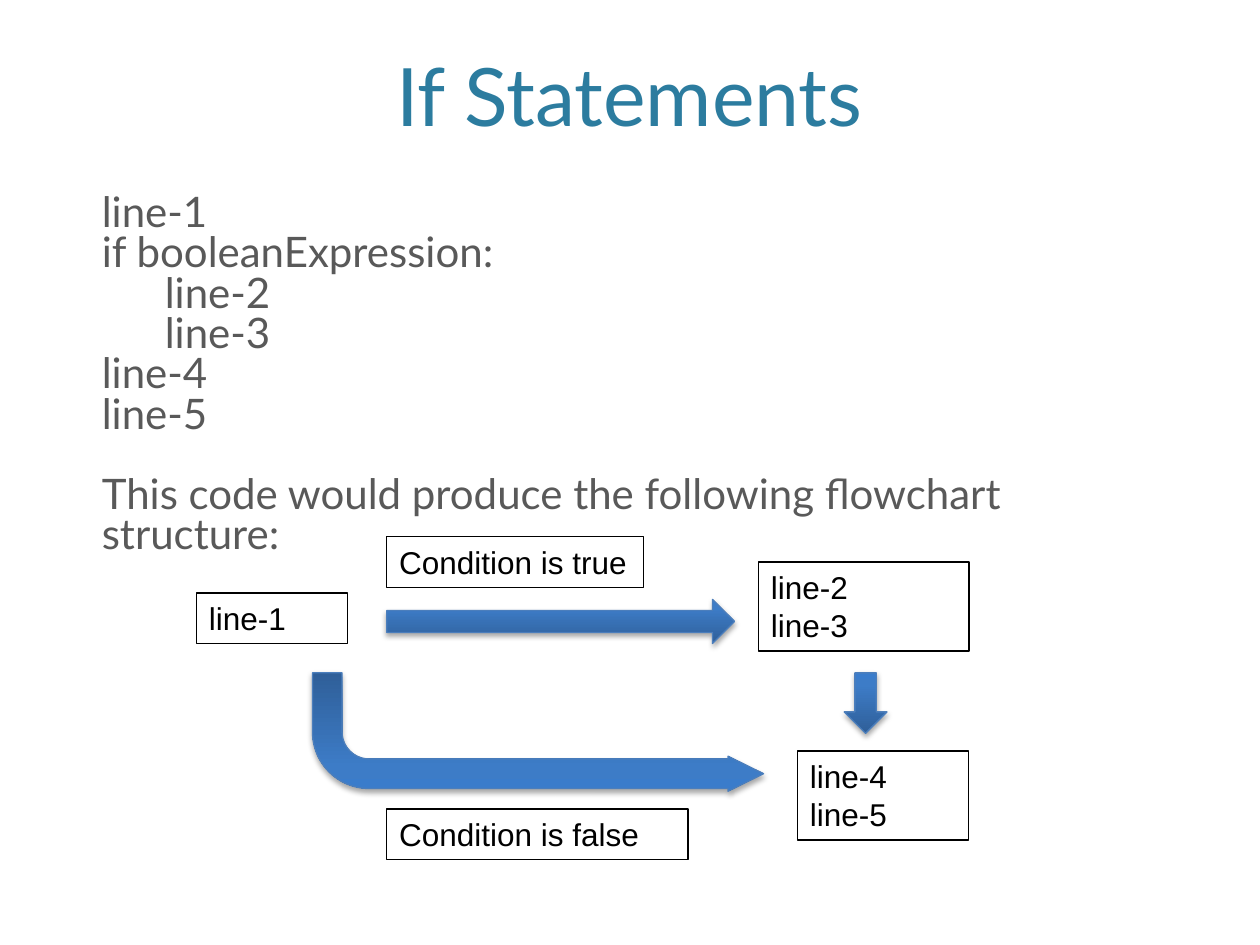
from pptx import Presentation
from pptx.dml.color import RGBColor
from pptx.enum import shapes, text
from pptx.oxml import parse_xml
from pptx.util import Pt

NAMESPACE = 'xmlns:a="http://schemas.openxmlformats.org/drawingml/2006/main"'
COLORS = {
    "title": "2C7C9F",
    "body": "595959",
    "ink": "000000",
    "arrow_line": "4B7EBC",
}
GRADIENT = [(0, "2F5F99"), (80, "3D7CC7"), (100, "3A7CCB")]

TITLE = ("If Statements", (43.2, -20.16, 632.88, 105.12))
BODY_PLACE = (51.12, 108, 632.88, 342)
BODY = [
    ("line-1", 0, 0),
    ("if booleanExpression:", 0, 0),
    ("line-2", 36, 0),
    ("line-3", 36, 0),
    ("line-4", 0, 0),
    ("line-5", 0, 0),
    ("This code would produce the following flowchart structure:", 0, 23),
]
BOXES = [
    (["line-1"], (112.32, 338.8, 86.4)),
    (["Condition is true"], (221.04, 306.72, 146.88)),
    (["line-2", "line-3"], (433.44, 321.12, 120.24)),
    (["Condition is false"], (221.04, 462.24, 172.08)),
    (["line-4", "line-5"], (455.76, 429.12, 97.92)),
]
BOX_HEIGHTS = {1: 29, 2: 51}
ARROWS = [
    ("RIGHT_ARROW", (221.04, 342.5, 198.72, 25.2), [], False),
    ("BENT_ARROW", (178.56, 384.48, 257.76, 67.68), [0.25, 0.148, 0.299, 0.477], True),
    ("DOWN_ARROW", (482.4, 384.48, 24.48, 34.56), [], False),
]

TITLE_FONT = {"name": "Lato", "size": Pt(46), "bold": False}
BODY_FONT = {"name": "Lato", "size": Pt(24)}
BOX_FONT = {"name": "Arial", "size": Pt(18)}


def color(name):
    return RGBColor.from_string(COLORS[name])


def apply(target, values):
    for name, value in values.items():
        setattr(target, name, value)


def format_font(paragraph, values, color_name):
    apply(paragraph.font, values)
    paragraph.font.color.rgb = color(color_name)


def place(shape, position):
    apply(shape, dict(zip(("left", "top", "width", "height"), map(Pt, position))))


def add_shape(slide, kind, position, line_color):
    shape = slide.shapes.add_shape(
        getattr(shapes.MSO_SHAPE, kind), *map(Pt, position))
    shape.shadow.inherit = False
    shape.line.color.rgb = color(line_color)
    shape.line.width = Pt(0.75)
    return shape


def add_title(slide):
    words, position = TITLE
    title = slide.shapes.title
    place(title, position)
    title.text_frame.text = words
    apply(title.text_frame, {"vertical_anchor": text.MSO_ANCHOR.BOTTOM, "word_wrap": True})
    paragraph = title.text_frame.paragraphs[0]
    paragraph.alignment = text.PP_ALIGN.CENTER
    format_font(paragraph, TITLE_FONT, "title")


def add_body(slide):
    frame = slide.shapes.add_textbox(*map(Pt, BODY_PLACE)).text_frame
    frame.word_wrap = True
    frame.text = "\n".join(words for words, _, _ in BODY)
    for paragraph, (_, indent, gap) in zip(frame.paragraphs, BODY):
        paragraph.line_spacing = 0.8
        if indent:
            paragraph._p.get_or_add_pPr().set("marL", str(Pt(indent)))
        if gap:
            paragraph.space_before = Pt(gap)
        format_font(paragraph, BODY_FONT, "body")


def add_box(slide, lines, position):
    box = add_shape(slide, "RECTANGLE", (*position, BOX_HEIGHTS[len(lines)]), "ink")
    box.fill.background()
    frame = box.text_frame
    frame.text = "\n".join(lines)
    apply(frame, {
        "word_wrap": True,
        "vertical_anchor": text.MSO_ANCHOR.TOP,
        "auto_size": text.MSO_AUTO_SIZE.SHAPE_TO_FIT_TEXT,
    })
    for paragraph in frame.paragraphs:
        paragraph.alignment = text.PP_ALIGN.LEFT
        format_font(paragraph, BOX_FONT, "ink")


def add_arrow(slide, kind, position, adjustments, flipped):
    arrow = add_shape(slide, kind, position, "arrow_line")
    for index, value in enumerate(adjustments):
        arrow.adjustments[index] = value
    properties = arrow._element.spPr
    if flipped:
        properties.xfrm.set("flipV", "1")
    stops = "".join(
        f'<a:gs pos="{percent * 1000}"><a:srgbClr val="{value}"/></a:gs>'
        for percent, value in GRADIENT)
    properties.prstGeom.addnext(parse_xml(
        f'<a:gradFill {NAMESPACE} rotWithShape="1"><a:gsLst>{stops}</a:gsLst>'
        '<a:lin ang="16200000" scaled="0"/></a:gradFill>'))
    properties[-1].append(parse_xml(
        f'<a:outerShdw {NAMESPACE} blurRad="{Pt(3.1)}" dist="{Pt(1.8)}" '
        f'dir="5400000" rotWithShape="0"><a:srgbClr val="{COLORS["ink"]}">'
        '<a:alpha val="35000"/></a:srgbClr></a:outerShdw>'))


def main():
    presentation = Presentation()
    apply(presentation, {"slide_width": Pt(720), "slide_height": Pt(540)})
    slide = presentation.slides.add_slide(presentation.slide_layouts[5])
    add_title(slide)
    add_body(slide)
    for lines, position in BOXES:
        add_box(slide, lines, position)
    for arrow in ARROWS:
        add_arrow(slide, *arrow)
    presentation.save("out.pptx")


if __name__ == "__main__":
    main()
